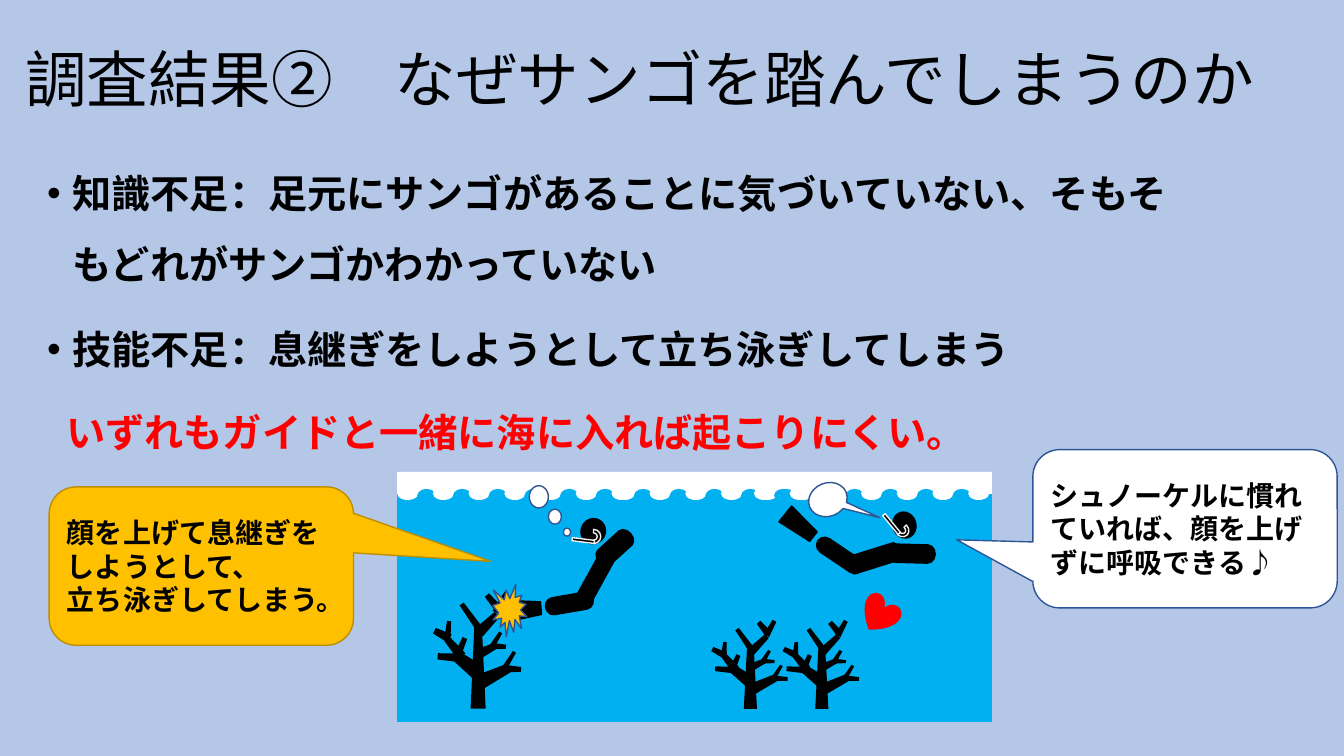
from dataclasses import dataclass

from lxml.etree import SubElement
from pptx import Presentation
from pptx.dml.color import RGBColor
from pptx.enum.shapes import MSO_SHAPE as Kind
from pptx.enum.text import MSO_ANCHOR as Anchor, PP_ALIGN as Align
from pptx.oxml.ns import qn
from pptx.util import Cm, Pt


@dataclass(frozen=True)
class Theme:
    font: str = "Noto Sans CJK JP"
    background: str = "B4C7E7"
    ink: str = "000000"
    white: str = "FFFFFF"
    sea: str = "00B0F0"
    red: str = "FF0000"
    amber: str = "FFC000"
    amber_edge: str = "BD8E00"
    blue_edge: str = "2F5597"
    bubble_edge: str = "325491"
    snorkel_edge: str = "F2F2F2"
    title_size: int = 44
    body_size: int = 28
    callout_size: int = 20


THEME = Theme()

# Body parts of a diver, in drawing order, with the colour of their outline
DIVER_PARTS = (
    (Kind.ROUNDED_RECTANGLE, THEME.ink),
    (Kind.FLOWCHART_TERMINATOR, THEME.ink),
    (Kind.FLOWCHART_TERMINATOR, THEME.ink),
    (Kind.FLOWCHART_MANUAL_OPERATION, THEME.ink),
    (Kind.OVAL, THEME.ink),
    (Kind.BLOCK_ARC, THEME.snorkel_edge),
    (Kind.RECTANGLE, THEME.snorkel_edge),
)
# Left, top, width, height, rotation of each part
STANDING_DIVER = (
    (14.3, 14.4, 1.37, 0.41, 298.9),
    (14.96, 13.56, 1.07, 0.48, 317.8),
    (13.74, 14.99, 1.22, 0.43, 350.2),
    (12.95, 14.94, 0.53, 0.84, 265.2),
    (14.63, 13.08, 0.64, 0.61, 298.9),
    (14.78, 13.34, 0.36, 0.36, 88.8),
    (14.66, 13.34, 0.08, 0.56, 277.1),
)
FLOATING_DIVER = (
    (21.39, 13.84, 1.27, 0.46, 342.6),
    (22.38, 13.72, 1.19, 0.46, 1.5),
    (20.5, 13.79, 1.32, 0.41, 34),
    (19.89, 12.78, 0.51, 0.91, 308.9),
    (22.5, 12.9, 0.58, 0.66, 342.6),
    (22.56, 13.16, 0.33, 0.38, 132.6),
    (22.43, 12.9, 0.08, 0.61, 320.8),
)
# Centre right of and above the foot, width, height, rotation, taper
CORAL_BRANCHES = (
    (0, 1.04, 0.38, 2.08, 0, 0.25),
    (0.24, 1.49, 0.25, 0.43, 64, 0.18),
    (0.46, 1.75, 0.13, 0.41, 31.8, 0.16),
    (0.55, 1.57, 0.15, 0.3, 93.1, 0.16),
    (0.41, 0.85, 0.38, 0.79, 64, 0.19),
    (0.79, 1.23, 0.13, 0.48, 31.8, 0.16),
    (0.89, 1, 0.18, 0.38, 93.1, 0.16),
    (0.25, 2.15, 0.28, 0.64, 45.5, 0.18),
    (0.37, 2.69, 0.2, 0.46, 319.5, 0.16),
    (0.58, 2.67, 0.18, 0.56, 29, 0.16),
    (-0.27, 1.12, 0.41, 0.66, 306.8, 0.16),
    (-0.18, 2.31, 0.18, 0.81, 324.6, 0.16),
    (-0.6, 1.54, 0.25, 0.58, 320, 0.16),
    (-0.91, 1.87, 0.23, 0.43, 297, 0.16),
    (-0.75, 2.02, 0.15, 0.38, 5.4, 0.16),
    (-0.69, 1.3, 0.23, 0.66, 274, 0.16),
    (-0.43, 1.56, 0.18, 0.48, 23.8, 0.16),
)
SEABED = 17.86
BUBBLES = ((14.2, 13.31, 0.18, 0.2), (13.34, 12.24, 0.48, 0.56), (13.82, 12.83, 0.33, 0.38))


def add_figure(shapes, kind, box, fill, edge=None, rotation=0, adjustments=()):
    figure = shapes.add_shape(kind, *(Cm(length) for length in box))
    figure.shadow.inherit = False
    figure.fill.solid()
    figure.fill.fore_color.rgb = RGBColor.from_string(fill)
    if edge:
        figure.line.color.rgb = RGBColor.from_string(edge)
        figure.line.width = Pt(1)
    else:
        figure.line.fill.background()
    figure.rotation = rotation
    for index, value in enumerate(adjustments):
        figure.adjustments[index] = value
    return figure


def write(frame, lines, size, color=THEME.ink, bold=True, spacing=None, align=Align.LEFT):
    frame.word_wrap = True
    frame.text = "\n".join(lines)
    for paragraph in frame.paragraphs:
        paragraph.alignment = align
        paragraph.line_spacing = spacing
        for run in paragraph.runs:
            run.font.size = Pt(size)
            run.font.bold = bold
            run.font.name = THEME.font
            run.font.color.rgb = RGBColor.from_string(color)
            SubElement(run.font._element, qn("a:ea"), typeface=THEME.font)


def add_bullet(paragraph):
    properties = paragraph._p.get_or_add_pPr()
    properties.set("marL", str(Cm(0.64)))
    properties.set("indent", str(-Cm(0.64)))
    SubElement(properties, qn("a:buFont"), typeface="Arial")
    SubElement(properties, qn("a:buChar"), char="•")


def add_text(slide, box, lines, **style):
    frame = slide.shapes.add_textbox(*(Cm(length) for length in box)).text_frame
    write(frame, lines, THEME.body_size, spacing=1.5, **style)
    return frame


def add_speech(slide, left, top, lines, fill, edge, tail):
    speech = add_figure(slide.shapes, Kind.ROUNDED_RECTANGULAR_CALLOUT,
                        (left, top, 7.67, 3.99), fill, edge, adjustments=(*tail, 0.17))
    speech.text_frame.vertical_anchor = Anchor.MIDDLE
    write(speech.text_frame, lines, THEME.callout_size)


def add_waves(shapes, start, crests=7, pitch=0.9):
    for index in range(crests):
        left = start + index * pitch
        add_figure(shapes, Kind.FLOWCHART_CONNECTOR, (left, 12.27, 0.53, 0.33), THEME.white)
        if index < crests - 1:
            add_figure(shapes, Kind.FLOWCHART_CONNECTOR, (left + 0.51, 12.32, 0.46, 0.33), THEME.sea)


def add_diver(shapes, pose):
    for (kind, edge), (*box, rotation) in zip(DIVER_PARTS, pose):
        add_figure(shapes, kind, box, THEME.ink, edge, rotation)


def add_coral(shapes, foot, across=1, up=1):
    """Draw a coral standing at foot, stretched by the factors across and up."""
    for dx, rise, width, height, rotation, taper in CORAL_BRANCHES:
        lying = 45 <= rotation % 180 < 135
        width *= up if lying else across
        height *= across if lying else up
        box = (foot + dx * across - width / 2, SEABED - rise * up - height / 2, width, height)
        add_figure(shapes, Kind.TRAPEZOID, box, THEME.ink, rotation=rotation, adjustments=(taper,))


def add_sea_scene(slide):
    shapes = slide.shapes.add_group_shape().shapes
    add_figure(shapes, Kind.RECTANGLE, (10.01, 11.89, 14.99, 1.22), THEME.white)
    add_figure(shapes, Kind.RECTANGLE, (10.01, 12.45, 14.99, 5.74), THEME.sea)
    for start in (10.01, 15.47, 19):
        add_waves(shapes, start)
    add_diver(shapes, STANDING_DIVER)
    add_coral(shapes, 12.05)
    add_figure(shapes, Kind.EXPLOSION1, (12.42, 14.73, 0.86, 1.32), THEME.amber, THEME.bubble_edge)
    for bubble in BUBBLES:
        add_figure(shapes, Kind.OVAL, bubble, THEME.white, THEME.bubble_edge)
    add_diver(shapes, FLOATING_DIVER)
    add_figure(shapes, Kind.HEART, (21.67, 15.04, 0.97, 0.91), THEME.red, rotation=35.1)
    add_figure(shapes, Kind.OVAL_CALLOUT, (20.37, 12.17, 0.99, 0.84), THEME.white,
               THEME.bubble_edge, 337.8, (1.05, 1.09))
    for foot in (18.91, 20.71):
        add_coral(shapes, foot, across=0.87, up=0.76)


def add_title(slide, text):
    title = slide.shapes.title
    title.left, title.top, title.width, title.height = Cm(0.38), Cm(0.99), Cm(32.41), Cm(2.18)
    title.text_frame.vertical_anchor = Anchor.MIDDLE
    write(title.text_frame, [text], THEME.title_size, bold=False, spacing=0.9)


def main():
    deck = Presentation()
    deck.slide_width, deck.slide_height = Cm(33.87), Cm(19.05)
    slide = deck.slides.add_slide(deck.slide_layouts[5])
    slide.background.fill.solid()
    slide.background.fill.fore_color.rgb = RGBColor.from_string(THEME.background)

    add_title(slide, "調査結果②　なぜサンゴを踏んでしまうのか")
    add_sea_scene(slide)
    add_speech(slide, 1.24, 12.27, ["顔を上げて息継ぎを", "しようとして、", "立ち泳ぎしてしまう。"],
               THEME.amber, THEME.amber_edge, (0.95, -0.03))
    causes = add_text(slide, (0.94, 3.56, 29.41, 6.1), [
        "知識不足：足元にサンゴがあることに気づいていない、そもそもどれがサンゴかわかっていない",
        "技能不足：息継ぎをしようとして立ち泳ぎしてしまう",
    ])
    for cause in causes.paragraphs:
        add_bullet(cause)
    causes.paragraphs[1].space_before = Pt(10)
    add_text(slide, (1.35, 9.58, 22.33, 1.78), ["いずれもガイドと一緒に海に入れば起こりにくい。"],
             color=THEME.red, align=Align.CENTER)
    add_speech(slide, 26.03, 11.33, ["シュノーケルに慣れていれば、顔を上げずに呼吸できる♪"],
               THEME.white, THEME.blue_edge, (-0.75, 0.07))
    deck.save("out.pptx")


if __name__ == "__main__":
    main()
